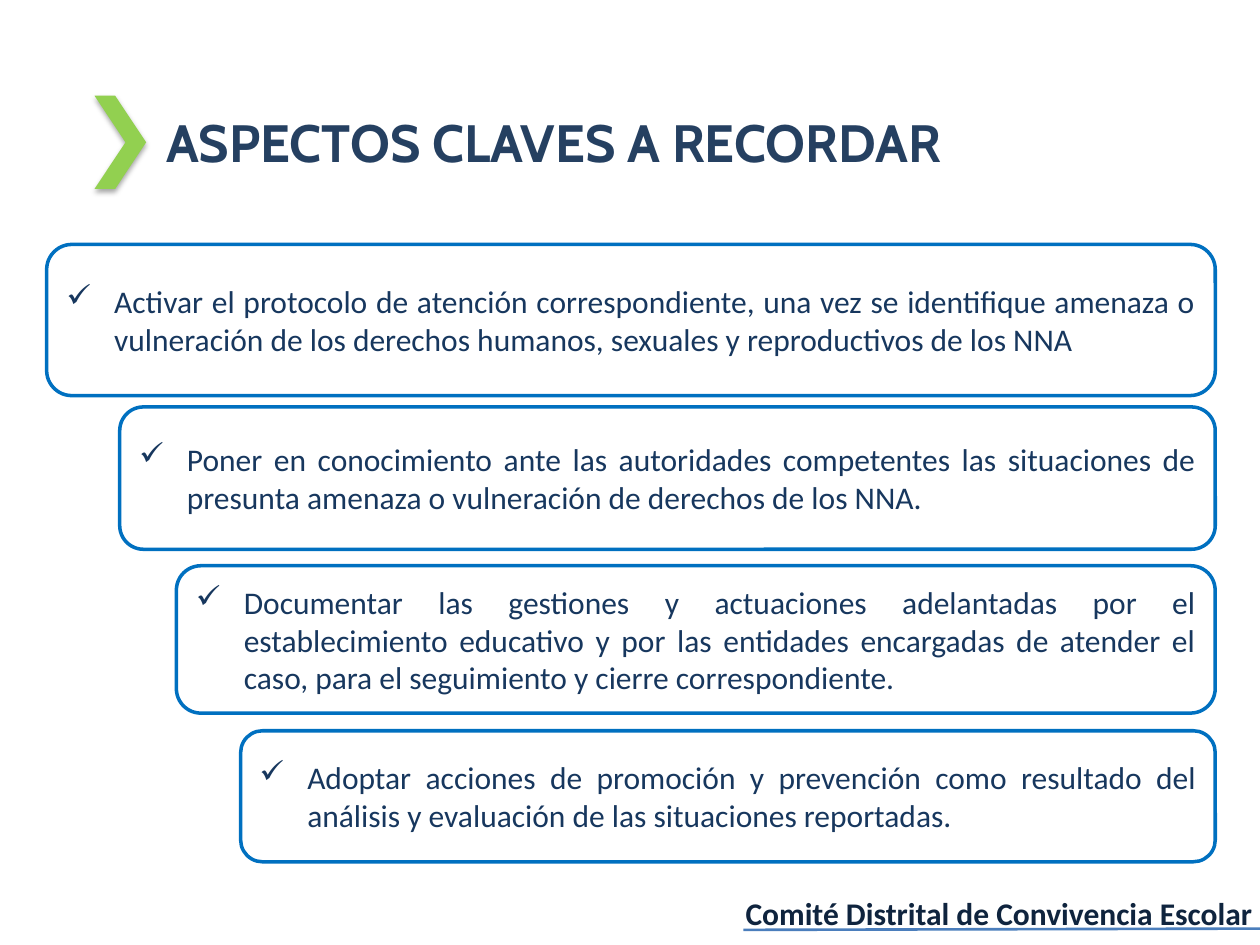
import pptx
import pptx.dml.color
import pptx.enum.shapes
import pptx.enum.text
import pptx.oxml
import pptx.oxml.ns
import pptx.util
from dataclasses import dataclass

Inches = pptx.util.Inches
Pt = pptx.util.Pt
Shape = pptx.enum.shapes.MSO_SHAPE
Align = pptx.enum.text.PP_ALIGN
Anchor = pptx.enum.text.MSO_ANCHOR
qn = pptx.oxml.ns.qn
DRAWING_NS = pptx.oxml.ns.nsdecls("a")


@dataclass(frozen=True)
class Theme:
    title_font: str = "Cabin"
    body_font: str = "Calibri"
    title_size: int = 30
    body_size: int = 18
    title: str = "254061"
    body: str = "17375E"
    footer: str = "0F243E"
    rule: str = "4B7EBC"
    accent: str = "92D050"
    card: str = "FFFFFF"
    border: str = "0070C0"


def rgb(value):
    return pptx.dml.color.RGBColor.from_string(value)


def write_text(frame, text, *, font, size, color, bold=False,
               align=Align.LEFT, bullet=None, indent=0.38):
    paragraph = frame.paragraphs[0]
    paragraph.alignment = align
    if bullet:
        properties = paragraph._p.get_or_add_pPr()
        properties.set("marL", str(Inches(indent)))
        properties.set("indent", str(-Inches(indent)))
        properties.append(pptx.oxml.parse_xml(
            f'<a:buChar {DRAWING_NS} char="{bullet}"/>'))
    run = paragraph.add_run()
    run.text = text
    run.font.name = font
    run.font.size = Pt(size)
    run.font.bold = bold
    run.font.color.rgb = rgb(color)


class SlideBuilder:
    def __init__(self, slide, theme):
        self.slide = slide
        self.theme = theme

    def label(self, text, left, top, width, height, wrap=True, **style):
        box = self.slide.shapes.add_textbox(
            Inches(left), Inches(top), Inches(width), Inches(height))
        box.text_frame.word_wrap = wrap
        write_text(box.text_frame, text, bold=True, **style)

    def rule(self, start, end):
        connector = self.slide.shapes.add_connector(
            pptx.enum.shapes.MSO_CONNECTOR.STRAIGHT,
            *map(Inches, start + end))
        connector.line.color.rgb = rgb(self.theme.rule)
        connector.line.width = Pt(1.5)
        connector._element.spPr.append(
            pptx.oxml.parse_xml(f"<a:effectLst {DRAWING_NS}/>"))

    def chevron(self, left, top, width, height):
        marker = self.slide.shapes.add_shape(
            Shape.CHEVRON, Inches(left), Inches(top), Inches(width), Inches(height))
        marker.adjustments[0] = 0.6
        marker.fill.solid()
        marker.fill.fore_color.rgb = rgb(self.theme.accent)
        marker.line.fill.background()
        marker.shadow.inherit = False
        effects = marker._element.spPr.find(qn("a:effectLst"))
        effects.append(pptx.oxml.parse_xml(
            f'<a:outerShdw {DRAWING_NS} blurRad="{Pt(3.1)}" dist="{Pt(1.8)}" '
            'dir="5400000" rotWithShape="0"><a:srgbClr val="000000">'
            '<a:alpha val="35000"/></a:srgbClr></a:outerShdw>'))

    def card(self, text, left, top, right, height):
        theme = self.theme
        card = self.slide.shapes.add_shape(
            Shape.ROUNDED_RECTANGLE, Inches(left), Inches(top),
            Inches(right - left), Inches(height))
        card.shadow.inherit = False
        card.fill.solid()
        card.fill.fore_color.rgb = rgb(theme.card)
        card.line.color.rgb = rgb(theme.border)
        card.line.width = Pt(2)
        card.text_frame.word_wrap = True
        card.text_frame.vertical_anchor = Anchor.MIDDLE
        write_text(card.text_frame, text, font=theme.body_font,
                   size=theme.body_size, color=theme.body,
                   align=Align.JUSTIFY, bullet="✓")


def main():
    presentation = pptx.Presentation()
    presentation.slide_width = Inches(10)
    presentation.slide_height = Inches(7.5)
    theme = Theme()
    builder = SlideBuilder(
        presentation.slides.add_slide(presentation.slide_layouts[6]), theme)

    builder.label("Comité Distrital de Convivencia Escolar", 5.79, 7.05, 4.25, 0.4,
                  wrap=False, font=theme.body_font, size=theme.body_size,
                  color=theme.footer, align=Align.RIGHT)
    builder.rule((5.9, 7.38), (10, 7.37))
    builder.label("ASPECTOS CLAVES A RECORDAR", 1.22, 0.82, 6.73, 0.61,
                  font=theme.title_font, size=theme.title_size, color=theme.title)
    builder.chevron(0.75, 0.76, 0.41, 0.74)

    cards_right = 9.645
    reminders = [
        (0.37, 1.94, 1.2, "Activar el protocolo de atención correspondiente, una vez se "
         "identifique amenaza o vulneración de los derechos humanos, sexuales y "
         "reproductivos de los NNA"),
        (0.95, 3.23, 1.13, "Poner en conocimiento ante las autoridades competentes las "
         "situaciones de presunta amenaza o vulneración de derechos de los NNA."),
        (1.4, 4.49, 1.17, "Documentar las gestiones y actuaciones adelantadas por el "
         "establecimiento educativo y por las entidades encargadas de atender el caso, "
         "para el seguimiento y cierre correspondiente."),
        (1.91, 5.8, 1.04, "Adoptar acciones de promoción y prevención como resultado del "
         "análisis y evaluación de las situaciones reportadas."),
    ]
    for left, top, height, reminder in reminders:
        builder.card(reminder, left, top, cards_right, height)

    presentation.save("out.pptx")


if __name__ == "__main__":
    main()
